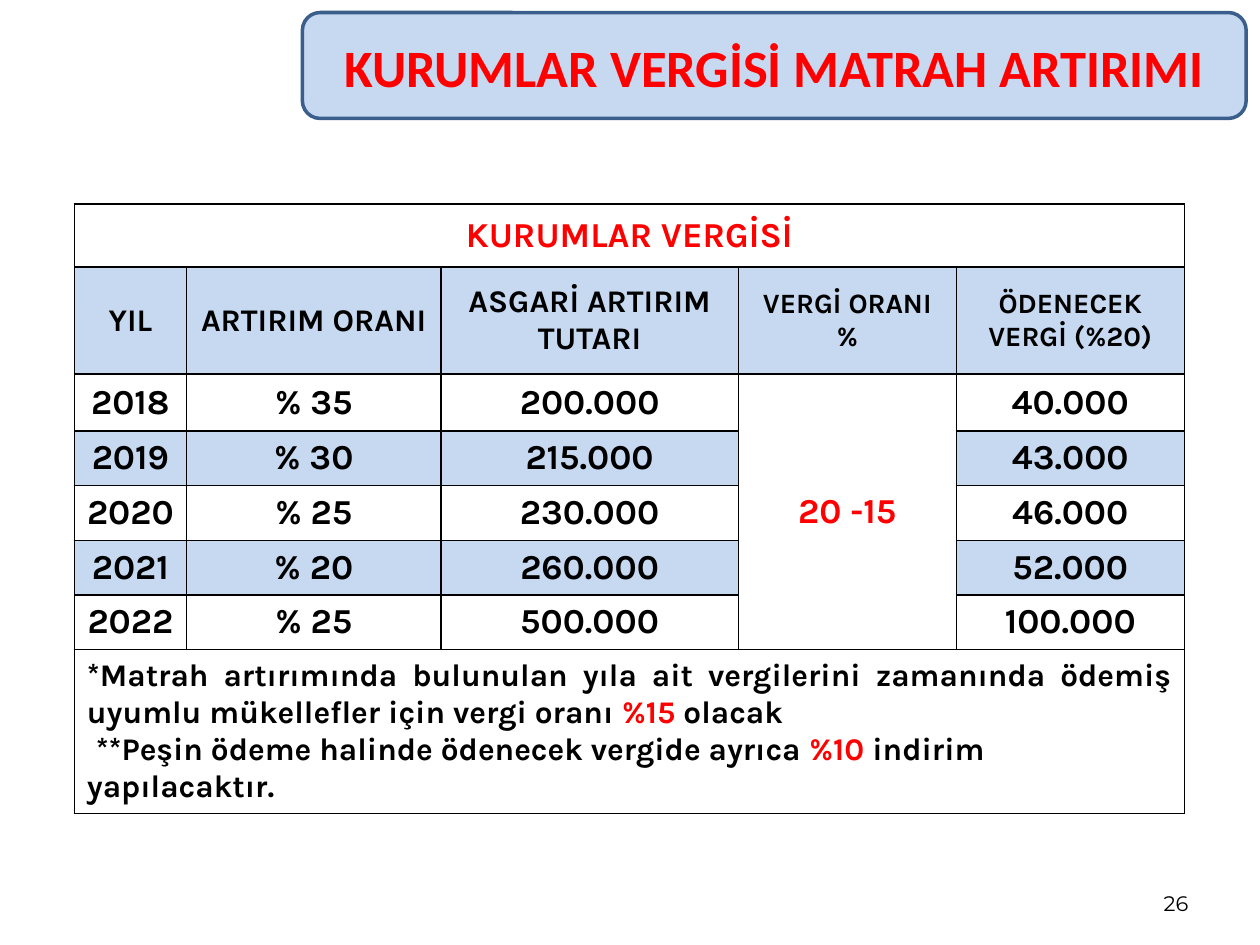
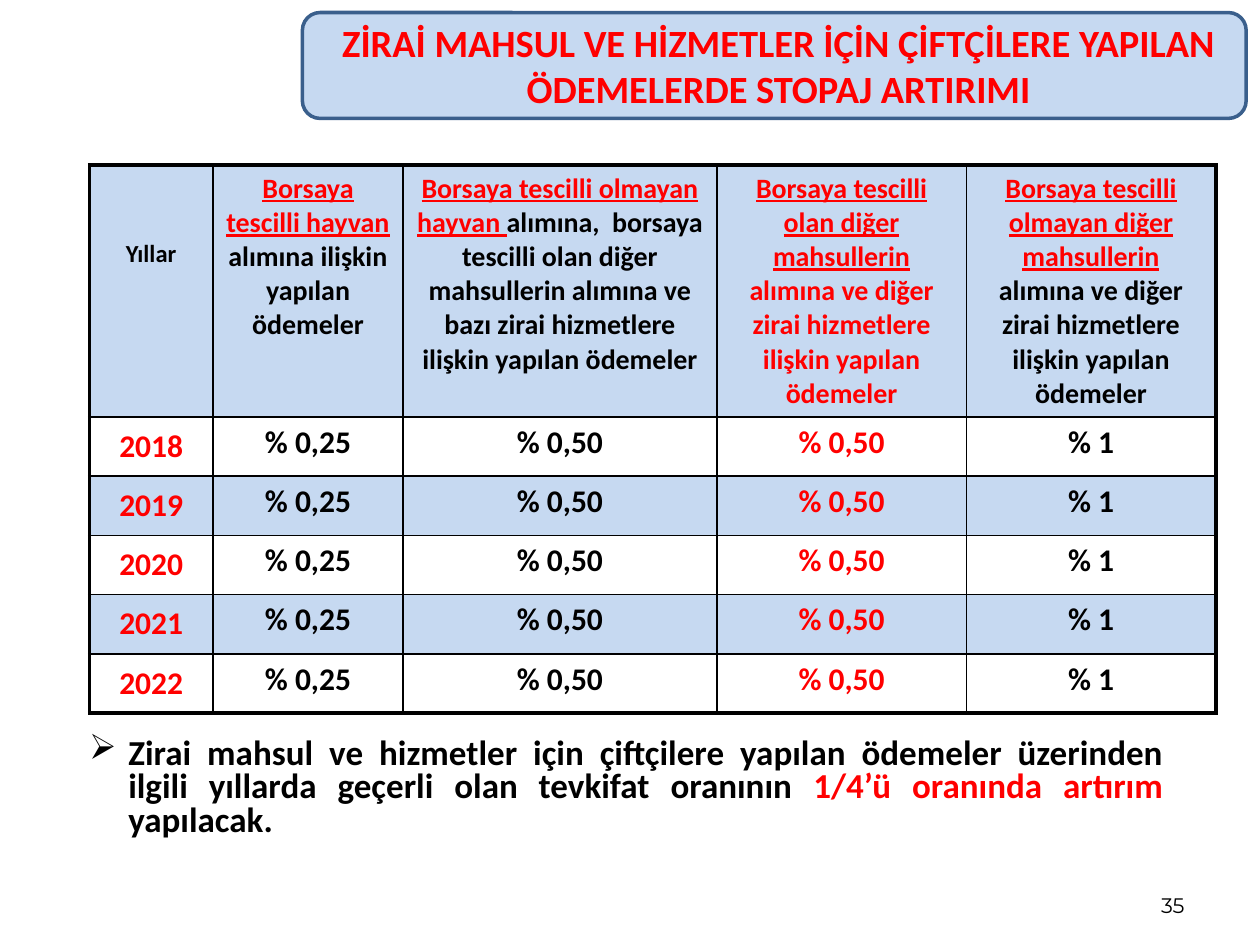
import pptx
import pptx.util
import pptx.dml.color
import pptx.enum.shapes
import pptx.enum.text
import pptx.oxml
from lxml import etree

Inches = pptx.util.Inches
Pt = pptx.util.Pt
RGBColor = pptx.dml.color.RGBColor
Align = pptx.enum.text.PP_ALIGN
Anchor = pptx.enum.text.MSO_ANCHOR

RED = RGBColor(0xFF, 0x00, 0x00)
BLACK = RGBColor(0x00, 0x00, 0x00)
PALE_BLUE = RGBColor(0xC6, 0xD9, 0xF1)
DARK_BLUE = RGBColor(0x3A, 0x5F, 0x8C)

# Content: a span is a plain string or (text, format)
RED_SPAN = {"color": RED}
RED_LINK = {"color": RED, "underline": True}

CORPORATE_TITLE = ["KURUMLAR VERGİSİ MATRAH ARTIRIMI"]
CORPORATE_CAPTION = "KURUMLAR VERGİSİ"
CORPORATE_HEADERS = [
    (["YIL"], 18),
    (["ARTIRIM ORANI"], 18),
    (["ASGARİ ARTIRIM TUTARI"], 18),
    (["VERGİ ORANI", "%"], 16),
    (["ÖDENECEK VERGİ (%20)"], 16),
]
CORPORATE_RATE = "20 -15"
CORPORATE_ROWS = [
    ("2018", "% 35", "200.000", "40.000"),
    ("2019", "% 30", "215.000", "43.000"),
    ("2020", "% 25", "230.000", "46.000"),
    ("2021", "% 20", "260.000", "52.000"),
    ("2022", "% 25", "500.000", "100.000"),
]
CORPORATE_NOTES = [
    ["*Matrah artırımında bulunulan yıla ait vergilerini zamanında ödemiş "
     "uyumlu mükellefler için vergi oranı ", ("%15 ", RED_SPAN), "olacak"],
    ["**Peşin ödeme halinde ödenecek vergide ayrıca ", ("%10 ", RED_SPAN),
     "indirim yapılacaktır."],
]
CORPORATE_COLUMNS = [0.89, 2.02, 2.36, 1.73, 1.81]
CORPORATE_HEIGHTS = [0.5, 0.85, 0.45] + [0.43] * 4 + [1.27]

FARM_TITLE = ["ZİRAİ MAHSUL VE HİZMETLER İÇİN ÇİFTÇİLERE YAPILAN",
              "ÖDEMELERDE STOPAJ ARTIRIMI"]
FARM_HEADERS = [
    [("Yıllar", {"size": Pt(14)})],
    [("Borsaya tescilli hayvan ", RED_LINK), "alımına ilişkin yapılan ödemeler"],
    [("Borsaya tescilli olmayan hayvan ", RED_LINK),
     "alımına,  borsaya tescilli olan diğer mahsullerin alımına ve bazı "
     "zirai hizmetlere ilişkin yapılan ödemeler"],
    [("Borsaya tescilli olan diğer mahsullerin ", RED_LINK),
     ("alımına ve diğer zirai hizmetlere ilişkin yapılan ödemeler", RED_SPAN)],
    [("Borsaya tescilli olmayan diğer mahsullerin ", RED_LINK),
     "alımına ve diğer zirai hizmetlere ilişkin yapılan ödemeler"],
]
FARM_YEARS = ["2018", "2019", "2020", "2021", "2022"]
FARM_RATES = ["% 0,25", "% 0,50", "% 0,50", "% 1"]
FARM_RED_COLUMNS = (0, 3)
FARM_NOTE = [
    "Zirai mahsul ve hizmetler için çiftçilere yapılan ödemeler üzerinden "
    "ilgili yıllarda geçerli olan tevkifat oranının ",
    ("1/4’ü oranında artırım", RED_SPAN), " yapılacak.",
]
FARM_COLUMNS = [0.98, 1.51, 2.49, 1.98, 1.98]
FARM_HEIGHTS = [2.0] + [0.47] * 5


# Text
def apply_format(font, values):
    for name, value in values.items():
        if name == "color":
            font.color.rgb = value
        else:
            setattr(font, name, value)


def write_spans(para, spans, base, **layout):
    for name, value in layout.items():
        setattr(para, name, value)
    for item in spans:
        text, extra = (item, {}) if isinstance(item, str) else item
        span = para.add_run()
        span.text = text
        apply_format(span.font, {**base, **extra})


def text_format(name, size, color=BLACK, bold=True):
    return {"name": name, "size": Pt(size), "bold": bold, "color": color}


def add_box(page, area, anchor):
    box = page.shapes.add_textbox(*map(Inches, area))
    box.text_frame.word_wrap = True
    box.text_frame.vertical_anchor = anchor
    return box.text_frame


# Shared page parts
def add_page(deck, title, title_area, title_size, number, number_area):
    page = deck.slides.add_slide(deck.slide_layouts[6])
    band = page.shapes.add_shape(
        pptx.enum.shapes.MSO_SHAPE.ROUNDED_RECTANGLE,
        *map(Inches, (2.4, 0.1, 7.49, 0.84)))
    band.shadow.inherit = False
    band.fill.solid()
    band.fill.fore_color.rgb = PALE_BLUE
    band.line.color.rgb = DARK_BLUE
    band.line.width = Pt(2)

    para = add_box(page, title_area, Anchor.MIDDLE).paragraphs[0]
    for index, line in enumerate(title):
        if index:
            para.add_line_break()
        write_spans(para, [line], text_format("Calibri", title_size, RED),
                    alignment=Align.CENTER)

    para = add_box(page, number_area, Anchor.BOTTOM).paragraphs[0]
    write_spans(para, [number], text_format("Montserrat", 12, bold=False),
                alignment=Align.RIGHT)
    return page


# Tables
def set_borders(cell, widths):
    properties = cell._tc.get_or_add_tcPr()
    for side, width in zip("LRTB", widths):
        properties.append(pptx.oxml.parse_xml(
            '<a:ln%s xmlns:a="http://schemas.openxmlformats.org/drawingml/2006/main"'
            ' w="%d"><a:solidFill><a:srgbClr val="%s"/></a:solidFill></a:ln%s>'
            % (side, Pt(width), BLACK, side)))


def add_grid(page, left, top, columns, heights, outer, filled):
    """Add a ruled table; filled(row, column) tells which cells are blue."""
    rows, cols = len(heights), len(columns)
    table = page.shapes.add_table(
        rows, cols, Inches(left), Inches(top),
        Inches(sum(columns)), Inches(sum(heights))).table
    table.first_row = table.horz_banding = False
    for column, width in zip(table.columns, columns):
        column.width = Inches(width)
    for row, height in zip(table.rows, heights):
        row.height = Inches(height)
    for r in range(rows):
        for c in range(cols):
            cell = table.cell(r, c)
            edges = (c == 0, c == cols - 1, r == 0, r == rows - 1)
            set_borders(cell, [outer if edge else 1 for edge in edges])
            if filled(r, c):
                cell.fill.solid()
                cell.fill.fore_color.rgb = PALE_BLUE
            else:
                cell.fill.background()
    return table


def fill_cell(cell, paragraphs, base, anchor=Anchor.MIDDLE, margin=0.1):
    cell.vertical_anchor = anchor
    cell.margin_left = cell.margin_right = Inches(margin)
    frame = cell.text_frame
    for index, spans in enumerate(paragraphs):
        para = frame.add_paragraph() if index else frame.paragraphs[0]
        write_spans(para, spans, base, alignment=Align.CENTER)


def build_corporate_page(deck):
    page = add_page(deck, CORPORATE_TITLE, (2.56, 0.21, 7.17, 0.63), 30,
                    "26", (7.2, 6.82, 2.33, 0.5))
    rate_column, note_row = 3, len(CORPORATE_HEIGHTS) - 1
    table = add_grid(
        page, 0.59, 1.62, CORPORATE_COLUMNS, CORPORATE_HEIGHTS, 1,
        lambda r, c: r == 1 or (r in (3, 5) and c != rate_column))
    large = text_format("Karla", 20)
    large_red = text_format("Karla", 20, RED)

    # Caption, headers and merged rate
    table.cell(0, 0).merge(table.cell(0, 4))
    fill_cell(table.cell(0, 0), [[CORPORATE_CAPTION]], large_red)
    for c, (lines, size) in enumerate(CORPORATE_HEADERS):
        fill_cell(table.cell(1, c), [[line] for line in lines],
                  text_format("Karla", size), margin=0.08)
    table.cell(2, rate_column).merge(table.cell(note_row - 1, rate_column))
    fill_cell(table.cell(2, rate_column), [[CORPORATE_RATE]], large_red)

    # Yearly figures
    for r, values in enumerate(CORPORATE_ROWS, start=2):
        for c, value in zip((0, 1, 2, 4), values):
            fill_cell(table.cell(r, c), [[value]], large, margin=0.08)

    # Notes
    table.cell(note_row, 0).merge(table.cell(note_row, 4))
    notes = table.cell(note_row, 0)
    fill_cell(notes, CORPORATE_NOTES, text_format("Karla", 18))
    first, second = notes.text_frame.paragraphs
    first.alignment = Align.JUSTIFY
    second.alignment = Align.LEFT
    second._p.get_or_add_pPr().set("indent", str(Inches(0.07)))


def build_farm_page(deck):
    page = add_page(deck, FARM_TITLE, (2.48, 0.05, 7.4, 0.94), 22,
                    "35", (7.17, 6.83, 2.33, 0.5))
    table = add_grid(page, 0.71, 1.31, FARM_COLUMNS, FARM_HEIGHTS, 2.25,
                     lambda r, c: r in (0, 2, 4))

    # Headers
    for c, spans in enumerate(FARM_HEADERS):
        fill_cell(table.cell(0, c), [spans], text_format("Calibri", 16), Anchor.TOP)
    table.cell(0, 0).margin_top = Inches(0.59)

    # Yearly rates
    for r, year in enumerate(FARM_YEARS, start=1):
        for c, value in enumerate([year] + FARM_RATES):
            color = RED if c in FARM_RED_COLUMNS else BLACK
            fill_cell(table.cell(r, c), [[value]], text_format("Calibri", 18, color),
                      Anchor.TOP if c else Anchor.MIDDLE)

    # Bulleted note
    para = add_box(page, (0.51, 5.81, 8.82, 0.95), Anchor.TOP).paragraphs[0]
    properties = para._p.get_or_add_pPr()
    properties.set("marL", str(Inches(0.41)))
    properties.set("indent", str(Inches(-0.31)))
    bullet = etree.SubElement(properties, pptx.oxml.ns.qn("a:buChar"))
    bullet.set("char", "➢")
    write_spans(para, FARM_NOTE, text_format("Calibri", 20),
                alignment=Align.JUSTIFY, line_spacing=0.8)


def main():
    deck = pptx.Presentation()
    deck.slide_width, deck.slide_height = Inches(10), Inches(7.5)
    build_corporate_page(deck)
    build_farm_page(deck)
    deck.save("out.pptx")


if __name__ == "__main__":
    main()
